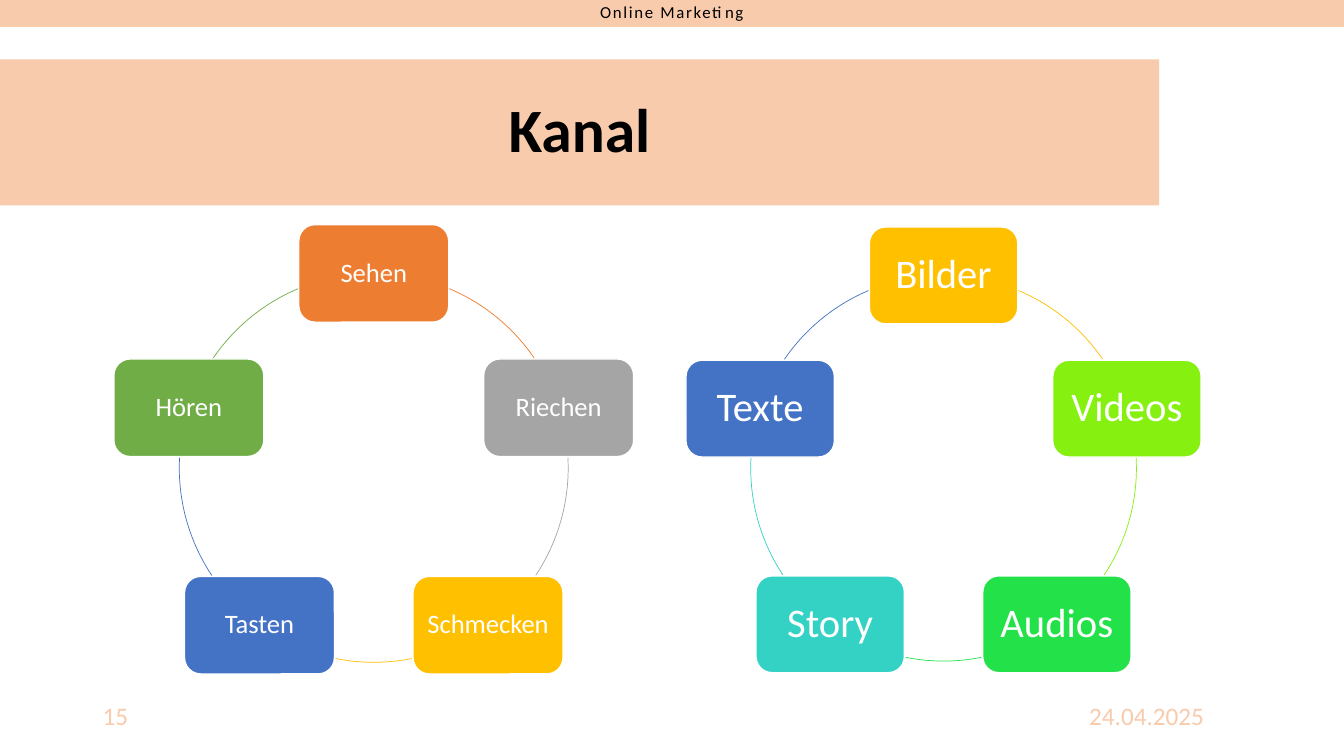
from dataclasses import dataclass
from math import cos, radians, sin

from pptx import Presentation
from pptx.dml.color import RGBColor
from pptx.enum.shapes import MSO_SHAPE
from pptx.enum.text import MSO_ANCHOR, PP_ALIGN
from pptx.shapes.autoshape import Shape
from pptx.slide import Slide
from pptx.util import Cm, Pt


@dataclass(frozen=True)
class Theme:
    font: str = "Calibri"
    peach: str = "F8CBAD"
    black: str = "000000"
    white: str = "FFFFFF"
    orange: str = "ED7D31"
    grey: str = "A5A5A5"
    gold: str = "FFC000"
    blue: str = "4472C4"
    green: str = "70AD47"
    lime: str = "86F011"
    bright: str = "23E148"
    teal: str = "33D2C5"
    head: int = 12
    title: int = 44
    foot: int = 18
    sense: int = 19
    media: int = 29


THEME = Theme()


@dataclass(frozen=True)
class Box:
    left: float
    top: float
    width: float
    height: float

    def cm(self) -> tuple[Cm, Cm, Cm, Cm]:
        return Cm(self.left), Cm(self.top), Cm(self.width), Cm(self.height)


@dataclass(frozen=True)
class Node:
    text: str
    color: str


@dataclass(frozen=True)
class Cycle:
    x: float
    y: float
    radius: float
    width: float
    height: float
    size: int
    inset: float
    nodes: tuple[Node, ...]


# Start and end angle of the arc after each node, clockwise from the right
ARCS = ((292.9, 325.6), (357, 33.6), (78.7, 101.3), (146.4, 183), (214.4, 247.1))

SENSES = Cycle(9.42, 11.79, 4.9, 3.78, 2.46, THEME.sense, 0.2, (
    Node("Sehen", THEME.orange),
    Node("Riechen", THEME.grey),
    Node("Schmecken", THEME.gold),
    Node("Tasten", THEME.blue),
    Node("Hören", THEME.green),
))
MEDIA = Cycle(23.78, 11.8, 4.86, 3.74, 2.44, THEME.media, 0.3, (
    Node("Bilder", THEME.gold),
    Node("Videos", THEME.lime),
    Node("Audios", THEME.bright),
    Node("Story", THEME.teal),
    Node("Texte", THEME.blue),
))


def rgb(color: str) -> RGBColor:
    return RGBColor.from_string(color)


def write(shape: Shape, text: str, size: int, color: str) -> None:
    para = shape.text_frame.paragraphs[0]
    para.text = text
    font = para.font
    font.name, font.size = THEME.font, Pt(size)
    font.color.rgb = rgb(color)


def center(shape: Shape, anchor: MSO_ANCHOR) -> None:
    frame = shape.text_frame
    frame.vertical_anchor = anchor
    para = frame.paragraphs[0]
    para.alignment, para.line_spacing = PP_ALIGN.CENTER, 0.9


def block(slide: Slide, kind: MSO_SHAPE, box: Box, color: str) -> Shape:
    shape = slide.shapes.add_shape(kind, *box.cm())
    shape.shadow.inherit = False
    shape.fill.solid()
    shape.fill.fore_color.rgb = rgb(color)
    shape.line.fill.background()
    return shape


def bar(slide: Slide, box: Box, text: str, size: int, anchor: MSO_ANCHOR) -> Shape:
    shape = block(slide, MSO_SHAPE.RECTANGLE, box, THEME.peach)
    write(shape, text, size, THEME.black)
    center(shape, anchor)
    return shape


def foot(slide: Slide, box: Box, text: str) -> None:
    label = slide.shapes.add_textbox(*box.cm())
    label.text_frame.word_wrap = True
    write(label, text, THEME.foot, THEME.peach)


def tile(slide: Slide, box: Box, node: Node, size: int, inset: float) -> None:
    shape = block(slide, MSO_SHAPE.ROUNDED_RECTANGLE, box, node.color)
    shape.line.color.rgb = rgb(THEME.white)
    shape.line.width = Pt(1)
    frame = shape.text_frame
    frame.word_wrap = False
    frame.margin_left = frame.margin_right = Cm(inset)
    frame.margin_top = frame.margin_bottom = Cm(inset)
    write(shape, node.text, size, THEME.white)
    center(shape, MSO_ANCHOR.MIDDLE)


def arc(slide: Slide, box: Box, span: tuple[float, float], color: str) -> None:
    shape = slide.shapes.add_shape(MSO_SHAPE.ARC, *box.cm())
    shape.shadow.inherit = False
    shape.fill.background()
    shape.line.color.rgb = rgb(color)
    shape.line.width = Pt(0.5)
    # One degree is 60000 units; adjustments count in 100000
    for i, angle in enumerate(span):
        shape.adjustments[i] = angle * 0.6


def draw(slide: Slide, ring: Cycle) -> None:
    side = 2 * ring.radius
    circle = Box(ring.x - ring.radius, ring.y - ring.radius, side, side)
    step = 360 / len(ring.nodes)
    for i, (node, span) in enumerate(zip(ring.nodes, ARCS)):
        turn = radians(i * step - 90)
        left = ring.x + ring.radius * cos(turn) - ring.width / 2
        top = ring.y + ring.radius * sin(turn) - ring.height / 2
        box = Box(left, top, ring.width, ring.height)
        tile(slide, box, node, ring.size, ring.inset)
        arc(slide, circle, span, node.color)


def main() -> None:
    deck = Presentation()
    deck.slide_width, deck.slide_height = Cm(33.87), Cm(19.05)
    slide = deck.slides.add_slide(deck.slide_layouts[6])

    # Footer
    foot(slide, Box(27.2, 17.53, 4.34, 1.12), "24.04.2025")
    foot(slide, Box(2.34, 17.53, 1.9, 0.89), "15")

    # Header bar with spaced letters
    head = bar(slide, Box(0, -0.03, 33.87, 0.71), "Online Marketing",
               THEME.head, MSO_ANCHOR.BOTTOM)
    run = head.text_frame.paragraphs[0].runs[0]
    run._r.get_or_add_rPr().set("spc", "120")

    # Title
    title = bar(slide, Box(0, 1.5, 29.21, 3.68), "Kanal",
                THEME.title, MSO_ANCHOR.MIDDLE)
    title.text_frame.paragraphs[0].font.bold = True

    # Cycles
    for ring in (SENSES, MEDIA):
        draw(slide, ring)

    deck.save("out.pptx")


if __name__ == "__main__":
    main()
